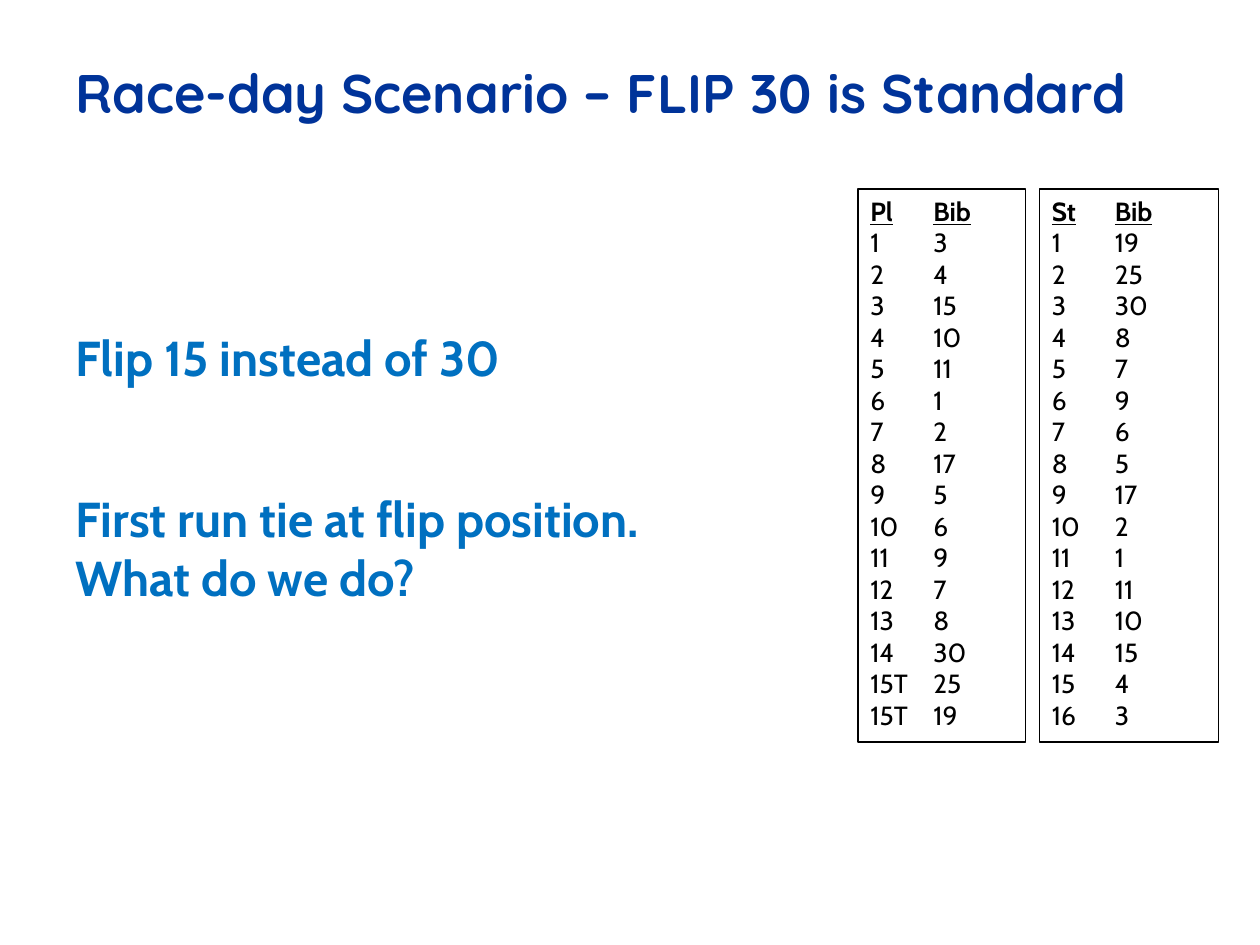
from pptx import Presentation
from pptx.dml.color import RGBColor
from pptx.enum.shapes import MSO_SHAPE
from pptx.enum.text import MSO_ANCHOR, PP_ALIGN
from pptx.util import Inches, Pt

RECTANGLE = MSO_SHAPE.RECTANGLE
TOP, BOTTOM = MSO_ANCHOR.TOP, MSO_ANCHOR.BOTTOM
LEFT = PP_ALIGN.LEFT

COLORS = {"title": "003399", "statement": "0070C0", "list": "000000"}
TITLE_FONT = {"name": "Quicksand", "size": Pt(31), "bold": True}
STATEMENT_FONT = {"name": "Cabin", "size": Pt(28), "bold": True}
HEADER_FONT = {"name": "Cabin", "size": Pt(15), "bold": True, "underline": True}
ROW_FONT = {"name": "Cabin", "size": Pt(15), "bold": False, "underline": False}

PLACES = [str(place) for place in range(1, 15)] + ["15T", "15T"]
FINISH_BIBS = [3, 4, 15, 10, 11, 1, 2, 17, 5, 6, 9, 7, 8, 30, 25, 19]
START_BIBS = FINISH_BIBS[::-1]
TYPED_STARTS = 2


def set_attributes(target, values):
    """Set every named value on the target."""
    for name, value in values.items():
        setattr(target, name, value)


def write_line(paragraph, text, font, color):
    """Write one formatted run into a paragraph."""
    run = paragraph.add_run()
    run.text = text
    set_attributes(run.font, font)
    run.font.color.rgb = RGBColor.from_string(COLORS[color])


def paragraph_at(frame, index):
    """Return the first paragraph or append a new one."""
    return frame.add_paragraph() if index else frame.paragraphs[0]


def add_text(slide, box, lines, font, color, layout, line_spacing=None):
    """Add a text box with one paragraph for each line."""
    frame = slide.shapes.add_textbox(*map(Inches, box)).text_frame
    set_attributes(frame, {"word_wrap": True, **layout})
    for index, line in enumerate(lines):
        paragraph = paragraph_at(frame, index)
        paragraph.line_spacing = line_spacing
        write_line(paragraph, line, font, color)


def set_hanging(paragraph, first_number=None):
    """Give a row its hanging indent and, if asked, automatic numbering."""
    properties = paragraph._p.get_or_add_pPr()
    properties.set("marL", str(Inches(0.5)))
    properties.set("indent", str(-Inches(0.5)))
    if first_number:
        numbering = properties.makeelement(
            "{http://schemas.openxmlformats.org/drawingml/2006/main}buAutoNum",
            {"type": "arabicPlain", "startAt": str(first_number)},
        )
        properties.append(numbering)


def add_bib_list(slide, left, width, rows, numbered_from=None):
    """Add a framed list whose rows past numbered_from are auto-numbered."""
    panel = slide.shapes.add_shape(
        RECTANGLE, Inches(left), Inches(1.5), Inches(width), Inches(4.39)
    )
    panel.shadow.inherit = False
    panel.fill.background()
    panel.line.color.rgb = RGBColor.from_string(COLORS["list"])
    panel.line.width = Pt(0.75)
    frame = panel.text_frame
    set_attributes(frame, {"word_wrap": True, "vertical_anchor": TOP})
    for index, row in enumerate(rows):
        paragraph = paragraph_at(frame, index)
        paragraph.alignment = LEFT
        numbered = numbered_from and index >= numbered_from
        set_hanging(paragraph, numbered_from if numbered else None)
        write_line(paragraph, row, ROW_FONT if index else HEADER_FONT, "list")


def main():
    """Build the race-day slide and save it."""
    deck = Presentation()
    deck.slide_width, deck.slide_height = Inches(10), Inches(7.5)
    slide = deck.slides.add_slide(deck.slide_layouts[6])

    add_text(slide, (0.5, 0.25, 9.28, 1.25),
             ["Race-day Scenario – FLIP 30 is Standard"], TITLE_FONT, "title",
             {"vertical_anchor": BOTTOM, "margin_bottom": Inches(0.51)}, 0.9)
    add_text(slide, (0.5, 2.08, 4.61, 1.38), ["Flip 15 instead of 30"],
             STATEMENT_FONT, "statement", {"margin_top": Inches(0.52)})
    add_text(slide, (0.5, 3.83, 5.57, 1.38),
             ["First run tie at flip position.", "What do we do?"],
             STATEMENT_FONT, "statement", {"margin_top": Inches(0.05)})

    finish_rows = [f"{place}\t{bib}" for place, bib in zip(PLACES, FINISH_BIBS)]
    start_rows = [f"{start}\t{bib}" if start <= TYPED_STARTS else str(bib)
                  for start, bib in enumerate(START_BIBS, 1)]
    add_bib_list(slide, 6.81, 1.33, ["Pl\tBib"] + finish_rows)
    add_bib_list(slide, 8.25, 1.42, ["St\tBib"] + start_rows, TYPED_STARTS + 1)
    deck.save("out.pptx")


if __name__ == "__main__":
    main()
